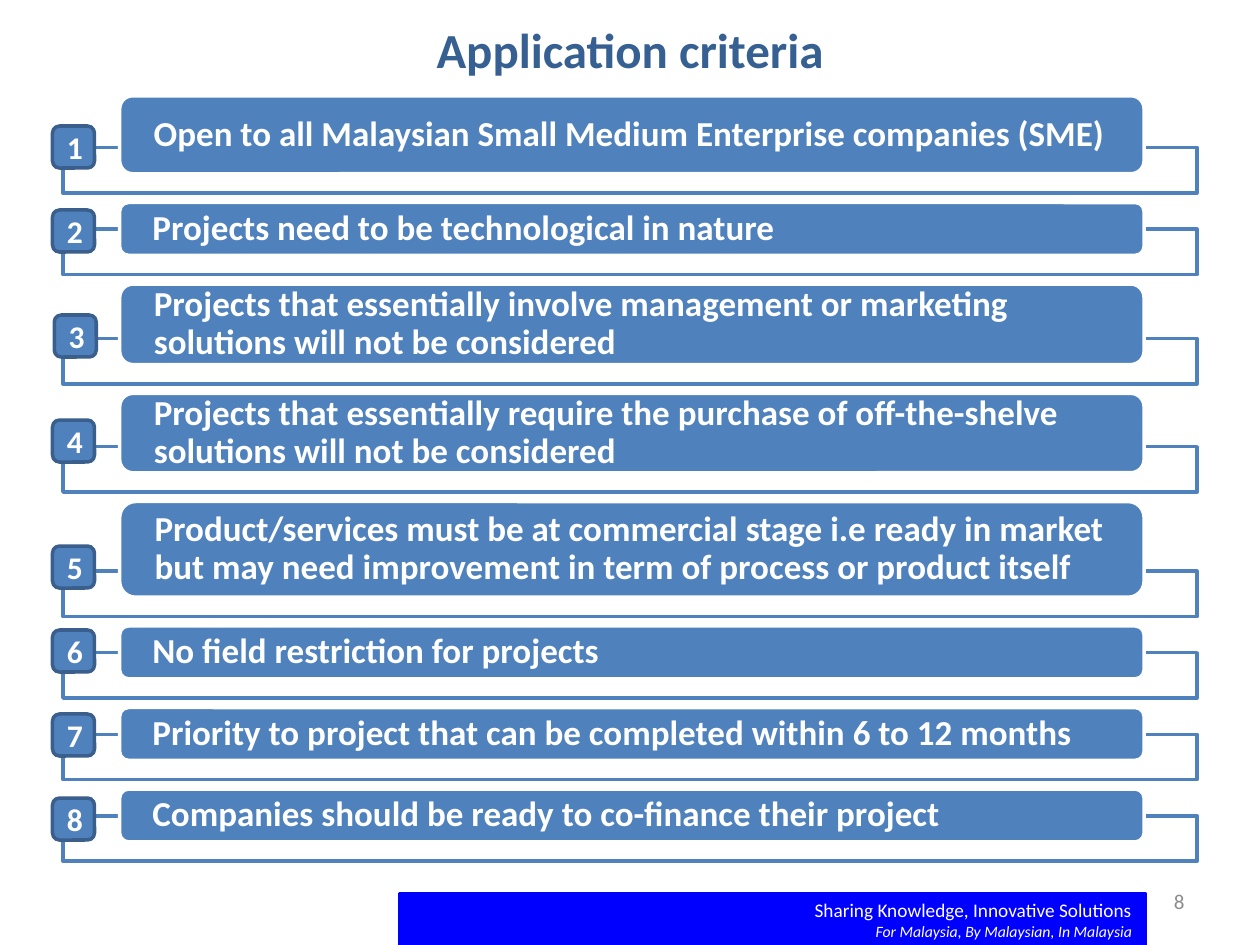
from dataclasses import dataclass

import pptx
import pptx.dml.color
import pptx.enum.shapes
import pptx.enum.text
import pptx.oxml
import pptx.util

Pt = pptx.util.Pt
Kind = pptx.enum.shapes.MSO_SHAPE
Align = pptx.enum.text.PP_ALIGN
Anchor = pptx.enum.text.MSO_ANCHOR

HUES = {
    "blue": "4F81BD",
    "edge": "3A5F8C",
    "title": "376092",
    "band": "0000FF",
    "white": "FFFFFF",
    "grey": "8C8C8C",
}
FONTS = {
    "title": {"size": Pt(28), "bold": True},
    "item": {"size": Pt(20), "bold": True},
    "badge": {"size": Pt(18), "bold": True},
    "motto": {"size": Pt(11)},
    "origin": {"size": Pt(9), "italic": True},
    "page": {"size": Pt(12)},
}
TOP, GAP = 54.7, 16.4
RAIL, DROP = 25.9, 14.9
NS = "http://schemas.openxmlformats.org/drawingml/2006/main"


@dataclass
class Item:
    text: str
    high: float
    mark: float  # top of the number badge
    left: float = 30


ITEMS = [
    Item("Open to all Malaysian Small Medium Enterprise companies (SME)", 44.6, 72),
    Item("Projects need to be technological in nature", 30.2, 120),
    Item("Projects that essentially involve management or marketing "
         "solutions will not be considered", 46.1, 180, 31),
    Item("Projects that essentially require the purchase of off-the-shelve "
         "solutions will not be considered", 45.4, 240),
    Item("Product/services must be at commercial stage i.e ready in market "
         "but may need improvement in term of process or product itself", 54.7, 312),
    Item("No field restriction for projects", 30.2, 360),
    Item("Priority to project that can be completed within 6 to 12 months", 30.2, 408),
    Item("Companies should be ready to co-finance their project", 30.2, 456),
]


def tint(hue: str) -> pptx.dml.color.RGBColor:
    return pptx.dml.color.RGBColor.from_string(HUES[hue])


def style(para, text: str, look: str, hue: str, align) -> None:
    """Fill a paragraph with one formatted run."""
    para.alignment = align
    run = para.add_run()
    run.text = text
    run.font.name = "Calibri"
    run.font.color.rgb = tint(hue)
    for name, value in FONTS[look].items():
        setattr(run.font, name, value)


def block(slide, kind, box: tuple, fill: str, line: str):
    shape = slide.shapes.add_shape(kind, *map(Pt, box))
    shape.shadow.inherit = False
    shape.fill.solid()
    shape.fill.fore_color.rgb = tint(fill)
    shape.line.color.rgb = tint(line)
    shape.line.width = Pt(2)
    return shape


def frame(shape, anchor):
    body = shape.text_frame
    body.word_wrap = True
    body.vertical_anchor = anchor
    return body


def fade(shape, share: int) -> None:
    """Set the opacity of a solid fill, in percent."""
    color = shape.fill._xPr.find(f"{{{NS}}}solidFill")[0]
    color.append(pptx.oxml.parse_xml(f'<a:alpha xmlns:a="{NS}" val="{share * 1000}"/>'))


def draw_item(slide, item: Item, top: float) -> None:
    rail = block(slide, Kind.RECTANGLE, (36, top + item.high - DROP, 648, RAIL),
                 "white", "blue")
    fade(rail, 90)
    bar = block(slide, Kind.ROUNDED_RECTANGLE, (68.4, top, 585.4, item.high),
                "blue", "white")
    body = frame(bar, Anchor.MIDDLE)
    insets = {"margin_left": 17.3, "margin_right": 17.3,
              "margin_top": 0, "margin_bottom": 0}
    for name, value in insets.items():
        setattr(body, name, Pt(value))
    body.paragraphs[0].line_spacing = 0.9
    style(body.paragraphs[0], item.text, "item", "white", Align.LEFT)


def draw_badge(slide, item: Item, rank: int) -> None:
    badge = block(slide, Kind.ROUNDED_RECTANGLE, (item.left, item.mark, 24, 24),
                  "blue", "edge")
    body = frame(badge, Anchor.MIDDLE)
    style(body.paragraphs[0], str(rank), "badge", "white", Align.CENTER)


def draw_foot(slide) -> None:
    block(slide, Kind.RECTANGLE, (228.2, 510.5, 426.2, 29.5), "band", "band")
    motto = slide.shapes.add_textbox(*map(Pt, (293.8, 509.8, 360, 31.7)))
    body = frame(motto, Anchor.TOP)
    style(body.paragraphs[0], "Sharing Knowledge, Innovative Solutions",
          "motto", "white", Align.RIGHT)
    style(body.add_paragraph(), "For Malaysia, By Malaysian, In Malaysia",
          "origin", "white", Align.RIGHT)
    page = slide.shapes.add_textbox(*map(Pt, (516.2, 500.4, 167.8, 28.8)))
    body = frame(page, Anchor.MIDDLE)
    style(body.paragraphs[0], "8", "page", "grey", Align.RIGHT)


def draw_title(slide) -> None:
    title = slide.shapes.title
    box = {"left": -12, "top": 0, "width": 744, "height": 56.2}
    for name, value in box.items():
        setattr(title, name, Pt(value))
    body = frame(title, Anchor.MIDDLE)
    style(body.paragraphs[0], "Application criteria", "title", "title", Align.CENTER)


def main() -> None:
    deck = pptx.Presentation()
    deck.slide_width, deck.slide_height = Pt(720), Pt(540)
    slide = deck.slides.add_slide(deck.slide_layouts.get_by_name("Title Only"))
    draw_title(slide)
    draw_foot(slide)
    top = TOP
    for item in ITEMS:
        draw_item(slide, item, top)
        top += item.high + GAP
    for rank, item in enumerate(ITEMS, 1):
        draw_badge(slide, item, rank)
    deck.save("out.pptx")


if __name__ == "__main__":
    main()
